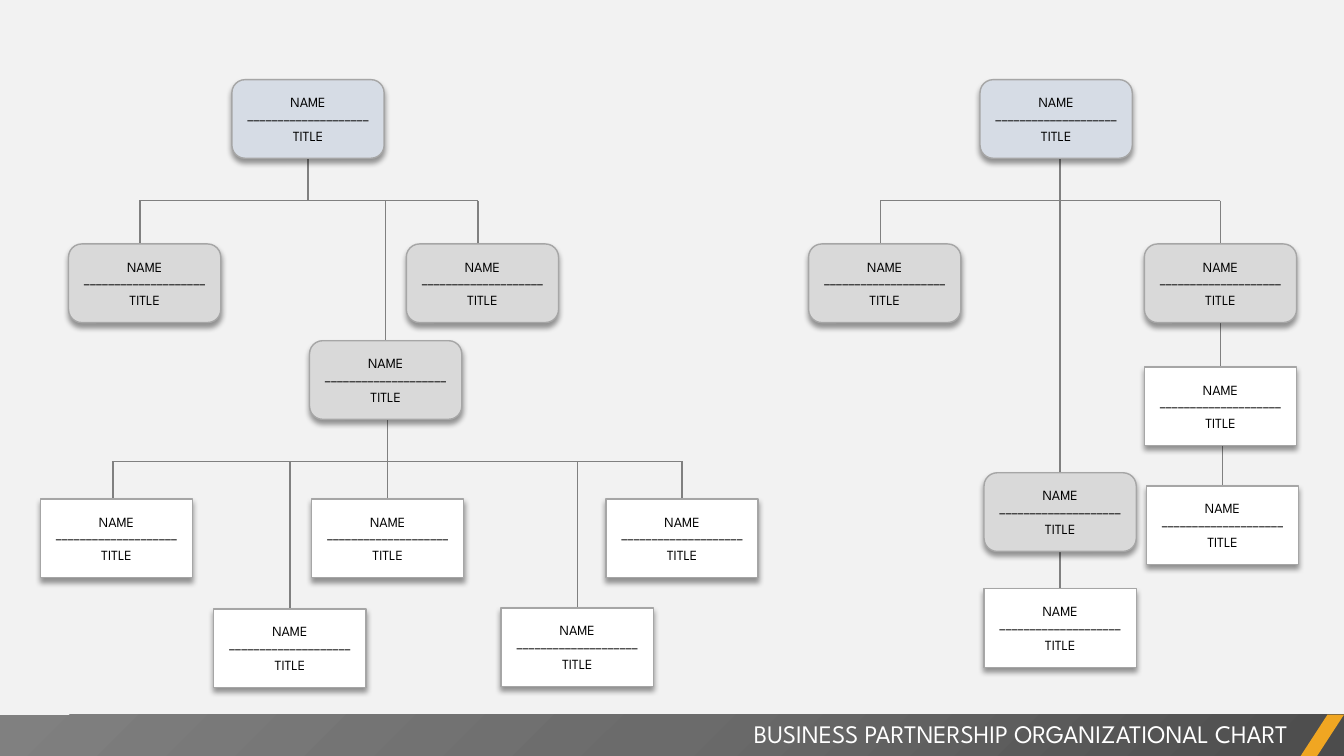
from dataclasses import dataclass

from pptx import Presentation
from pptx.dml.color import RGBColor
from pptx.enum.shapes import MSO_CONNECTOR as Connector, MSO_SHAPE as Preset
from pptx.enum.text import MSO_ANCHOR as Anchor, MSO_AUTO_SIZE as AutoSize, PP_ALIGN as Align
from pptx.oxml import parse_xml
from pptx.oxml.ns import nsdecls, qn
from pptx.shapes.autoshape import Shape
from pptx.shapes.connector import Connector as Line
from pptx.slide import Slide
from pptx.text.text import _Paragraph as Paragraph
from pptx.util import Inches, Pt

WIDTH, HEIGHT = Inches(13.33), Inches(7.5)
COLUMNS, ROWS = 133.3, 75
CARD_COLUMNS, CARD_ROWS = 15.1, 7.8
FOOTER_ROW = 70.9
PARTNER_BAR, STAFF_BAR = 19.9, 45.8
FONT = "League Spartan"
CARD_LINES = ("NAME", "–" * 20, "TITLE")
COLORS = {
    "background": "F2F2F2", "partner": "D6DCE5", "manager": "D9D9D9", "staff": "FFFFFF",
    "border": "A6A6A6", "link": "808080", "text": "000000", "title": "FFFFFF",
    "accent": "F0A622", "footer dark": "4C4C4C", "footer middle": "6B6B6B",
    "footer light": "808080",
}


@dataclass(frozen=True)
class Card:
    center: float
    top: float
    level: str


@dataclass(frozen=True)
class Link:
    """A line between two (column, row) points, optionally joined to named cards."""
    start: tuple[float, float]
    end: tuple[float, float]
    above: str = ""
    below: str = ""


CARDS = {
    "left partner": Card(30.55, 7.9, "partner"),
    "right partner": Card(104.75, 7.9, "partner"),
    "left manager 1": Card(14.35, 24.2, "manager"),
    "left manager 2": Card(47.85, 24.2, "manager"),
    "left manager 3": Card(38.25, 33.8, "manager"),
    "right manager 1": Card(87.75, 24.2, "manager"),
    "right manager 2": Card(121.05, 24.2, "manager"),
    "right manager 3": Card(105.15, 46.9, "manager"),
    "left staff 1": Card(11.55, 49.5, "staff"),
    "left staff 2": Card(28.75, 60.4, "staff"),
    "left staff 3": Card(38.45, 49.5, "staff"),
    "left staff 4": Card(57.25, 60.3, "staff"),
    "left staff 5": Card(67.65, 49.5, "staff"),
    "right staff 1": Card(121.05, 36.4, "staff"),
    "right staff 2": Card(121.25, 48.2, "staff"),
    "right staff 3": Card(105.15, 58.4, "staff"),
}

LINKS = (
    Link((13.8, PARTNER_BAR), (47.4, PARTNER_BAR)),
    Link((87.3, PARTNER_BAR), (121.05, PARTNER_BAR)),
    Link((11.1, STAFF_BAR), (67.7, STAFF_BAR)),
    Link((30.55, 15.7), (30.55, 19.8), above="left partner"),
    Link((105.15, 14.7), (105.15, 19.8)),
    Link((13.9, PARTNER_BAR), (13.9, 24.9)),
    Link((47.4, PARTNER_BAR), (47.4, 24.9)),
    Link((38.25, PARTNER_BAR), (38.25, 33.8), below="left manager 3"),
    Link((87.3, PARTNER_BAR), (87.3, 24.9)),
    Link((121.05, PARTNER_BAR), (121.05, 24.2), below="right manager 2"),
    Link((105.15, PARTNER_BAR), (105.15, 58.4), below="right staff 3"),
    Link((121.05, 32), (121.05, 36.4), above="right manager 2", below="right staff 1"),
    Link((121.25, 43.8), (121.25, 48.2), below="right staff 2"),
    Link((38.45, 41.3), (38.45, 49.5), below="left staff 3"),
    Link((11.2, STAFF_BAR), (11.2, 50.9)),
    Link((28.75, STAFF_BAR), (28.75, 60.4), below="left staff 2"),
    Link((57.25, STAFF_BAR), (57.25, 60.3), below="left staff 4"),
    Link((67.65, STAFF_BAR), (67.65, 49.5), below="left staff 5"),
)


def across(columns: float) -> int:
    return round(WIDTH * columns / COLUMNS)


def down(rows: float) -> int:
    return round(HEIGHT * rows / ROWS)


def color(name: str) -> RGBColor:
    return RGBColor.from_string(COLORS[name])


def add_run(paragraph: Paragraph, text: str, size: float, color_name: str) -> None:
    run = paragraph.add_run()
    run.text = text
    run.font.name = FONT
    run.font.size = Pt(size)
    run.font.color.rgb = color(color_name)


def add_filled(slide: Slide, preset: Preset, left: float, top: float,
               columns: float, rows: float, fill: str) -> Shape:
    shape = slide.shapes.add_shape(preset, across(left), down(top), across(columns), down(rows))
    shape.shadow.inherit = False
    shape.fill.solid()
    shape.fill.fore_color.rgb = color(fill)
    shape.line.fill.background()
    return shape


def draw_footer(slide: Slide) -> None:
    rows = ROWS - FOOTER_ROW
    band = add_filled(slide, Preset.RECTANGLE, 0, FOOTER_ROW, COLUMNS, rows, "footer middle")
    stops = "".join(
        f'<a:gs pos="{position * 1000}"><a:srgbClr val="{COLORS[name]}"/></a:gs>'
        for position, name in ((0, "footer dark"), (50, "footer middle"), (100, "footer light")))
    properties = band.element.spPr
    properties.replace(properties.find(qn("a:solidFill")), parse_xml(
        f'<a:gradFill {nsdecls("a")}><a:gsLst>{stops}</a:gsLst><a:path path="circle">'
        '<a:fillToRect l="100000" t="100000"/></a:path></a:gradFill>'))

    accent = add_filled(slide, Preset.PARALLELOGRAM, 129, FOOTER_ROW, 4.3, rows, "accent")
    accent.adjustments[0] = 0.65

    title = slide.shapes.add_textbox(across(52.5), down(70.8), across(76.2), down(4))
    frame = title.text_frame
    frame.word_wrap = True
    frame.auto_size = AutoSize.SHAPE_TO_FIT_TEXT
    frame.paragraphs[0].alignment = Align.RIGHT
    add_run(frame.paragraphs[0], "BUSINESS PARTNERSHIP ORGANIZATIONAL CHART", 18, "title")


def draw_link(slide: Slide, link: Link) -> Line:
    (left, top), (right, bottom) = link.start, link.end
    line = slide.shapes.add_connector(
        Connector.STRAIGHT, across(left), down(top), across(right), down(bottom))
    line.line.color.rgb = color("link")
    line.line.width = Pt(1)
    line.element.spPr.append(parse_xml(f'<a:effectLst {nsdecls("a")}/>'))
    return line


def draw_card(slide: Slide, card: Card) -> Shape:
    preset = Preset.RECTANGLE if card.level == "staff" else Preset.FLOWCHART_ALTERNATE_PROCESS
    shape = add_filled(slide, preset, card.center - CARD_COLUMNS / 2, card.top,
                       CARD_COLUMNS, CARD_ROWS, card.level)
    shape.line.color.rgb = color("border")
    shape.line.width = Pt(1)
    shape.element.spPr.find(qn("a:effectLst")).append(parse_xml(
        f'<a:outerShdw {nsdecls("a")} blurRad="{Pt(4)}" dist="{Pt(3)}" dir="5400000" '
        'algn="t" rotWithShape="0"><a:srgbClr val="000000"><a:alpha val="40000"/>'
        '</a:srgbClr></a:outerShdw>'))
    frame = shape.text_frame
    frame.word_wrap = True
    frame.vertical_anchor = Anchor.MIDDLE
    frame.margin_left = frame.margin_right = across(0.2)
    frame.margin_top = frame.margin_bottom = down(0.2)
    for index, text in enumerate(CARD_LINES):
        paragraph = frame.add_paragraph() if index else frame.paragraphs[0]
        paragraph.alignment = Align.CENTER
        add_run(paragraph, text, 10, "text")
    return shape


def draw_chart(slide: Slide) -> None:
    """Draw the lines behind the cards, then join them."""
    lines = [draw_link(slide, link) for link in LINKS]
    shapes = {name: draw_card(slide, card) for name, card in CARDS.items()}
    for link, line in zip(LINKS, lines):
        if link.above:
            line.begin_connect(shapes[link.above], 2)
        if link.below:
            line.end_connect(shapes[link.below], 0)


def main() -> None:
    presentation = Presentation()
    presentation.slide_width, presentation.slide_height = WIDTH, HEIGHT
    slide = presentation.slides.add_slide(presentation.slide_layouts[6])
    slide.background.fill.solid()
    slide.background.fill.fore_color.rgb = color("background")
    draw_footer(slide)
    draw_chart(slide)
    presentation.save("out.pptx")


if __name__ == "__main__":
    main()
